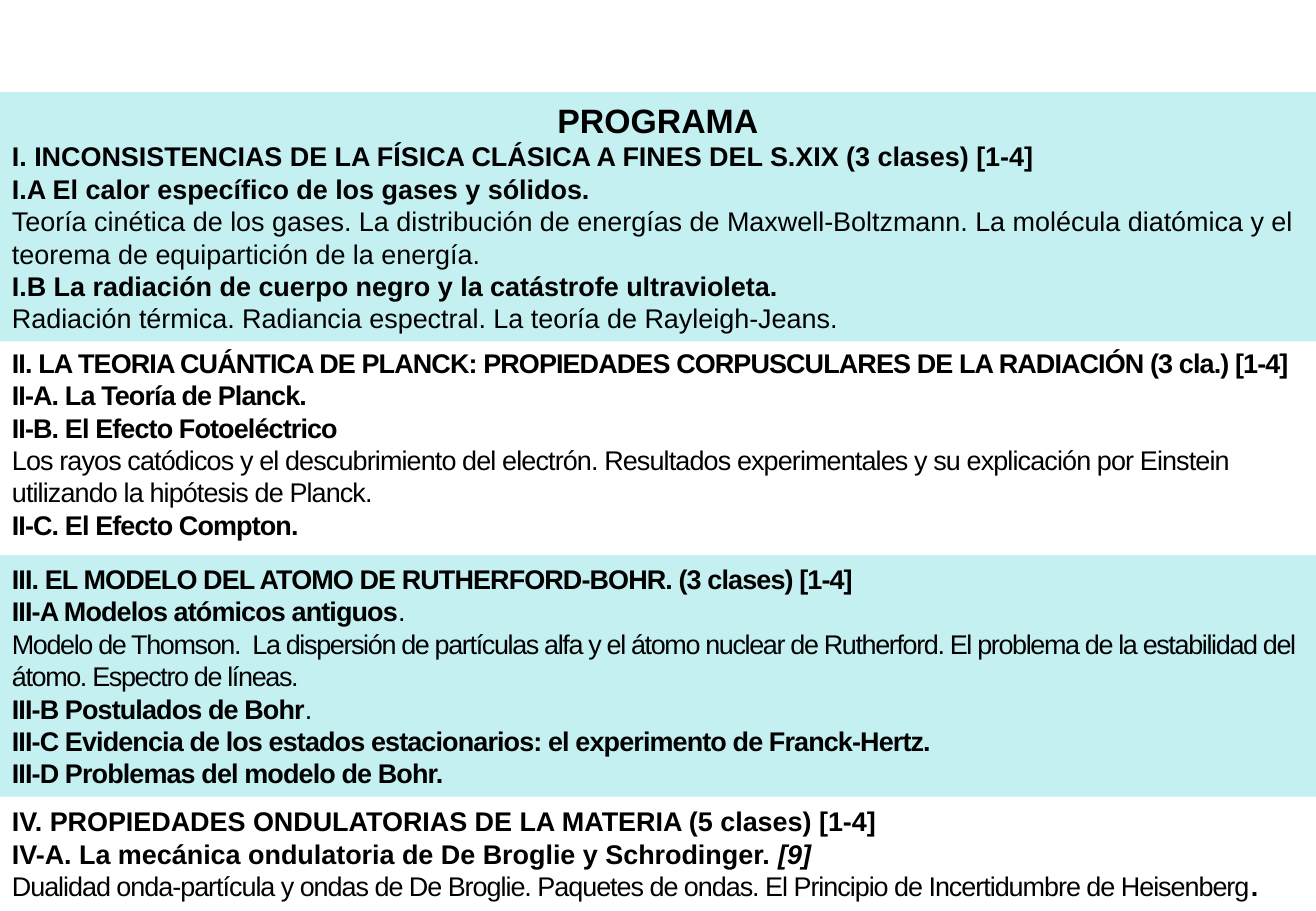
from lxml.etree import SubElement
from pptx import Presentation
from pptx.dml.color import RGBColor
from pptx.enum.shapes import MSO_SHAPE
from pptx.enum.text import MSO_ANCHOR, MSO_AUTO_SIZE, PP_ALIGN
from pptx.oxml.ns import qn
from pptx.util import Cm, Pt

FONT = "Arial"
TEXT_COLOR = "000000"
BAND_COLOR = "5BD5DB"
BAND_OPACITY = 35  # percent
BODY_SIZE = 16
TITLE_SIZE = 20
BOLD, PLAIN, ITALIC, TITLE = "bold", "plain", "bold italic", "bold title"


def paint(color_format, hex_color):
    color_format.rgb = RGBColor.from_string(hex_color)


def add_text_run(paragraph, text, style, spacing):
    run = paragraph.add_run()
    run.text = text.rstrip("\n")
    run.font.name = FONT
    run.font.size = Pt(TITLE_SIZE if style == TITLE else BODY_SIZE)
    run.font.bold = "bold" in style
    run.font.italic = "italic" in style
    paint(run.font.color, TEXT_COLOR)
    if spacing:
        run._r.get_or_add_rPr().set("spc", str(round(spacing * 100)))
    if text.endswith("\n"):
        paragraph.add_line_break()


# Units of the programme: top and height in cm, coloured band or not, and
# paragraphs made of runs (text, style, letter spacing in points)
units = [
    (1.93, 5.21, True, [
        [("PROGRAMA", TITLE, 0)],
        [("I. INCONSISTENCIAS DE LA FÍSICA CLÁSICA A FINES DEL S.XIX (3 clases) [1-4]", BOLD, 0)],
        [("I.A El calor específico de los gases y sólidos.", BOLD, 0)],
        [("Teoría cinética de los gases. La distribución de energías de Maxwell-Boltzmann. "
          "La molécula diatómica y el teorema de equipartición de la energía.", PLAIN, 0)],
        [("I.B La radiación de cuerpo negro y la catástrofe ultravioleta. \n", BOLD, 0),
         ("Radiación térmica. Radiancia espectral. La teoría de Rayleigh-Jeans.", PLAIN, 0)],
    ]),
    (7.09, 4.37, False, [
        [("II. LA TEORIA CUÁNTICA DE PLANCK: PROPIEDADES CORPUSCULARES "
          "DE LA RADIACIÓN (3 cla.) [1-4]", BOLD, -0.5)],
        [("II-A. La Teoría de Planck.", BOLD, -0.5)],
        [("II-B. El Efecto Fotoeléctrico", BOLD, -0.5)],
        [("Los rayos catódicos y el descubrimiento del electrón. Resultados experimentales "
          "y su explicación por Einstein utilizando la hipótesis de Planck.", PLAIN, -0.5)],
        [("II-C. El Efecto Compton.", BOLD, -0.5)],
    ]),
    (11.61, 5.05, True, [
        [("III. EL MODELO DEL ATOMO DE RUTHERFORD-BOHR. (3 clases) [1-4]", BOLD, -0.5)],
        [("III-A Modelos atómicos antiguos", BOLD, -0.5), (".", PLAIN, -0.5)],
        [("Modelo de Thomson.  La dispersión de partículas alfa y el átomo nuclear de Rutherford. "
          "El problema de la estabilidad del átomo. Espectro de líneas.", PLAIN, -0.8)],
        [("III-B Postulados de Bohr", BOLD, -0.5), (". \n", PLAIN, -0.5),
         ("III-C Evidencia de los estados estacionarios: el experimento de Franck-Hertz.",
          BOLD, -0.5)],
        [("III-D Problemas del modelo de Bohr.", BOLD, -0.5)],
    ]),
    (16.69, 2.31, False, [
        [("IV. PROPIEDADES ONDULATORIAS DE LA MATERIA (5 clases) [1-4]", BOLD, 0)],
        [("IV-A. La mecánica ondulatoria de De Broglie y Schrodinger. ", BOLD, 0),
         ("[9]", ITALIC, 0)],
        [("Dualidad onda-partícula y ondas de De Broglie. Paquetes de ondas. "
          "El Principio de Incertidumbre de Heisenberg", PLAIN, -0.6), (".", BOLD, -0.6)],
    ]),
]

presentation = Presentation()
presentation.slide_width = Cm(27.51)
presentation.slide_height = Cm(19.05)
slide = presentation.slides.add_slide(presentation.slide_layouts[6])

for top, height, banded, paragraphs in units:
    # Full-width band or plain text box
    place = (Cm(0), Cm(top), presentation.slide_width, Cm(height))
    if banded:
        shape = slide.shapes.add_shape(MSO_SHAPE.RECTANGLE, *place)
        shape.shadow.inherit = False
        shape.line.fill.background()
        shape.fill.solid()
        paint(shape.fill.fore_color, BAND_COLOR)
        color = shape._element.spPr.find(qn("a:solidFill"))[0]
        SubElement(color, qn("a:alpha")).set("val", str(BAND_OPACITY * 1000))
    else:
        shape = slide.shapes.add_textbox(*place)

    # Text of the unit
    text_frame = shape.text_frame
    text_frame.word_wrap = True
    text_frame.auto_size = MSO_AUTO_SIZE.SHAPE_TO_FIT_TEXT
    text_frame.vertical_anchor = MSO_ANCHOR.MIDDLE
    for index, runs in enumerate(paragraphs):
        paragraph = text_frame.add_paragraph() if index else text_frame.paragraphs[0]
        is_title = runs[0][1] == TITLE
        paragraph.alignment = PP_ALIGN.CENTER if is_title else PP_ALIGN.LEFT
        for text, style, spacing in runs:
            add_text_run(paragraph, text, style, spacing)

presentation.save("out.pptx")
